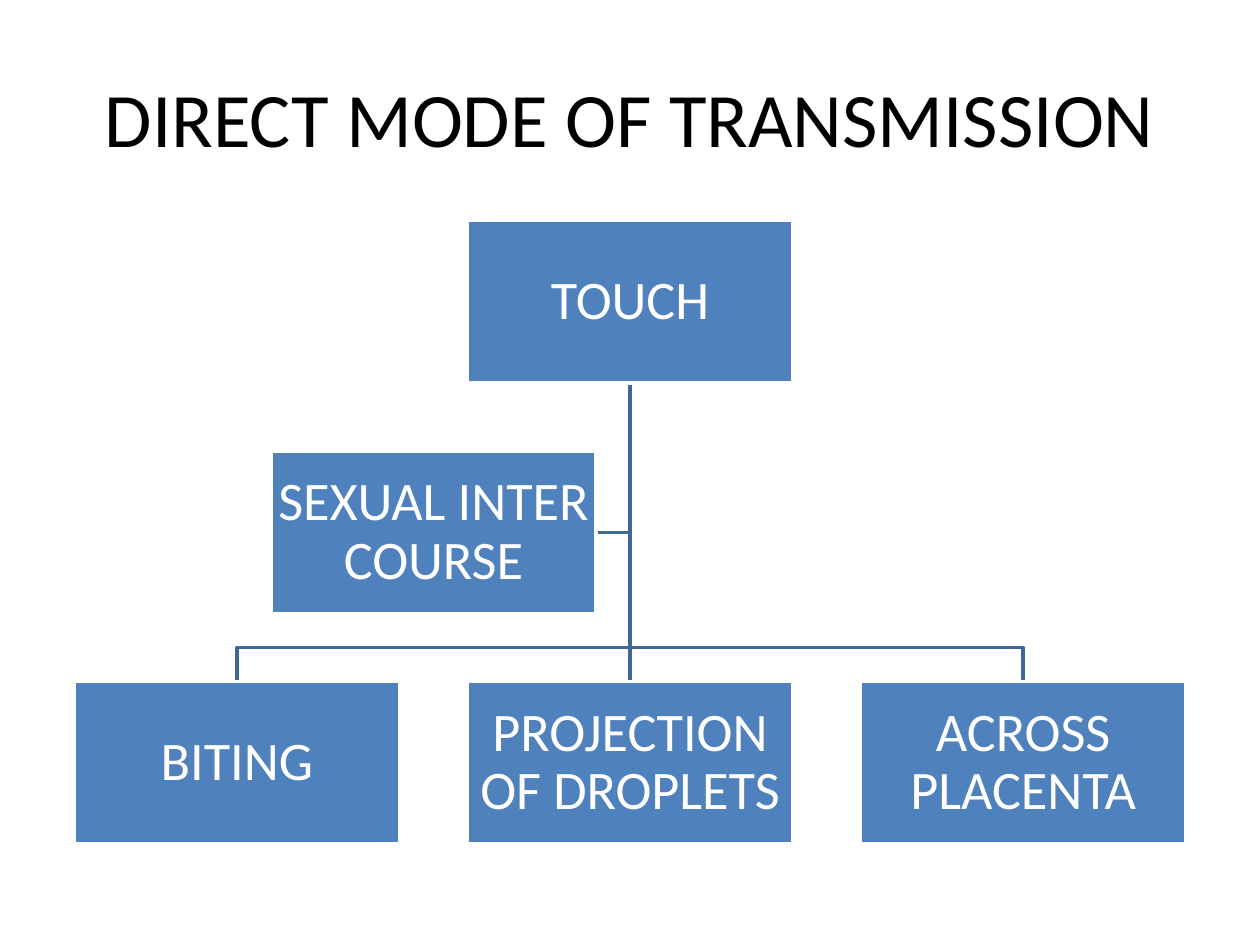
from lxml import etree
from pptx import Presentation
from pptx.dml.color import RGBColor
from pptx.enum.shapes import MSO_CONNECTOR, MSO_SHAPE
from pptx.enum.text import MSO_ANCHOR, PP_ALIGN
from pptx.oxml.ns import qn
from pptx.util import Inches, Pt

RECTANGLE = MSO_SHAPE.RECTANGLE
STRAIGHT = MSO_CONNECTOR.STRAIGHT
MIDDLE = MSO_ANCHOR.MIDDLE
CENTER = PP_ALIGN.CENTER

BOX_WIDTH, BOX_HEIGHT = 2.58, 1.29
MID_X, COLUMN_STEP = 5, 3.12
TOUCH_TOP, ASSISTANT_TOP, CHILD_TOP = 1.75, 3.58, 5.41
BRANCH_Y = 5.14


def color(hex_value):
    return RGBColor.from_string(hex_value)


class ChartSlide:
    """Draws the elements of an organisation chart on one slide in one style."""

    font_name = "Calibri"
    box_fill = "4F81BD"
    box_text = "FFFFFF"
    link_color = "3F6797"
    title_color = "000000"
    line_width = Pt(2)

    def __init__(self, slide):
        self.shapes = slide.shapes

    def label(self, frame, text, size, text_color):
        frame.word_wrap = True
        frame.vertical_anchor = MIDDLE
        paragraph = frame.paragraphs[0]
        paragraph.text = text
        paragraph.alignment = CENTER
        paragraph.font.name = self.font_name
        paragraph.font.size = Pt(size)
        paragraph.font.color.rgb = color(text_color)
        return paragraph

    def title(self, text, left, top, width, height):
        heading = self.shapes.add_textbox(
            Inches(left), Inches(top), Inches(width), Inches(height))
        self.label(heading.text_frame, text, 44, self.title_color)

    def box(self, text, center_x, top):
        node = self.shapes.add_shape(
            RECTANGLE, Inches(center_x - BOX_WIDTH / 2), Inches(top),
            Inches(BOX_WIDTH), Inches(BOX_HEIGHT))
        node.shadow.inherit = False
        node.fill.solid()
        node.fill.fore_color.rgb = color(self.box_fill)
        self.outline(node, self.box_text)
        frame = node.text_frame
        frame.margin_left = frame.margin_right = Inches(0.02)
        frame.margin_top = frame.margin_bottom = Inches(0.02)
        self.label(frame, text, 31, self.box_text).line_spacing = 0.9

    def outline(self, shape, line_color):
        shape.line.color.rgb = color(line_color)
        shape.line.width = self.line_width

    def elbow(self, *points):
        start, *rest = [(Inches(x), Inches(y)) for x, y in points]
        builder = self.shapes.build_freeform(*start)
        builder.add_line_segments(rest, close=False)
        link = builder.convert_to_shape()
        link.shadow.inherit = False
        link.fill.background()
        self.outline(link, self.link_color)

    def straight(self, x, top, bottom):
        link = self.shapes.add_connector(
            STRAIGHT, Inches(x), Inches(top), Inches(x), Inches(bottom))
        self.outline(link, self.link_color)
        etree.SubElement(link._element.spPr, qn("a:effectLst"))


def main():
    presentation = Presentation()
    presentation.slide_width = Inches(10)
    presentation.slide_height = Inches(7.5)
    chart = ChartSlide(presentation.slides.add_slide(presentation.slide_layouts[6]))

    chart.title("DIRECT MODE OF TRANSMISSION", 0.5, 0.3, 9, 1.25)

    trunk_top = TOUCH_TOP + BOX_HEIGHT
    assistant_x = MID_X - COLUMN_STEP / 2
    assistant_right = assistant_x + BOX_WIDTH / 2
    assistant_mid = ASSISTANT_TOP + BOX_HEIGHT / 2
    left_x, right_x = MID_X - COLUMN_STEP, MID_X + COLUMN_STEP

    chart.elbow((MID_X, trunk_top), (MID_X, assistant_mid),
                (assistant_right, assistant_mid))
    for child_x in (right_x, left_x):
        chart.elbow((MID_X, trunk_top), (MID_X, BRANCH_Y),
                    (child_x, BRANCH_Y), (child_x, CHILD_TOP))
    chart.straight(MID_X, trunk_top, CHILD_TOP)

    for text, center_x, top in (
        ("TOUCH", MID_X, TOUCH_TOP),
        ("BITING", left_x, CHILD_TOP),
        ("PROJECTION OF DROPLETS", MID_X, CHILD_TOP),
        ("ACROSS PLACENTA", right_x, CHILD_TOP),
        ("SEXUAL INTER COURSE", assistant_x, ASSISTANT_TOP),
    ):
        chart.box(text, center_x, top)

    presentation.save("out.pptx")


if __name__ == "__main__":
    main()
